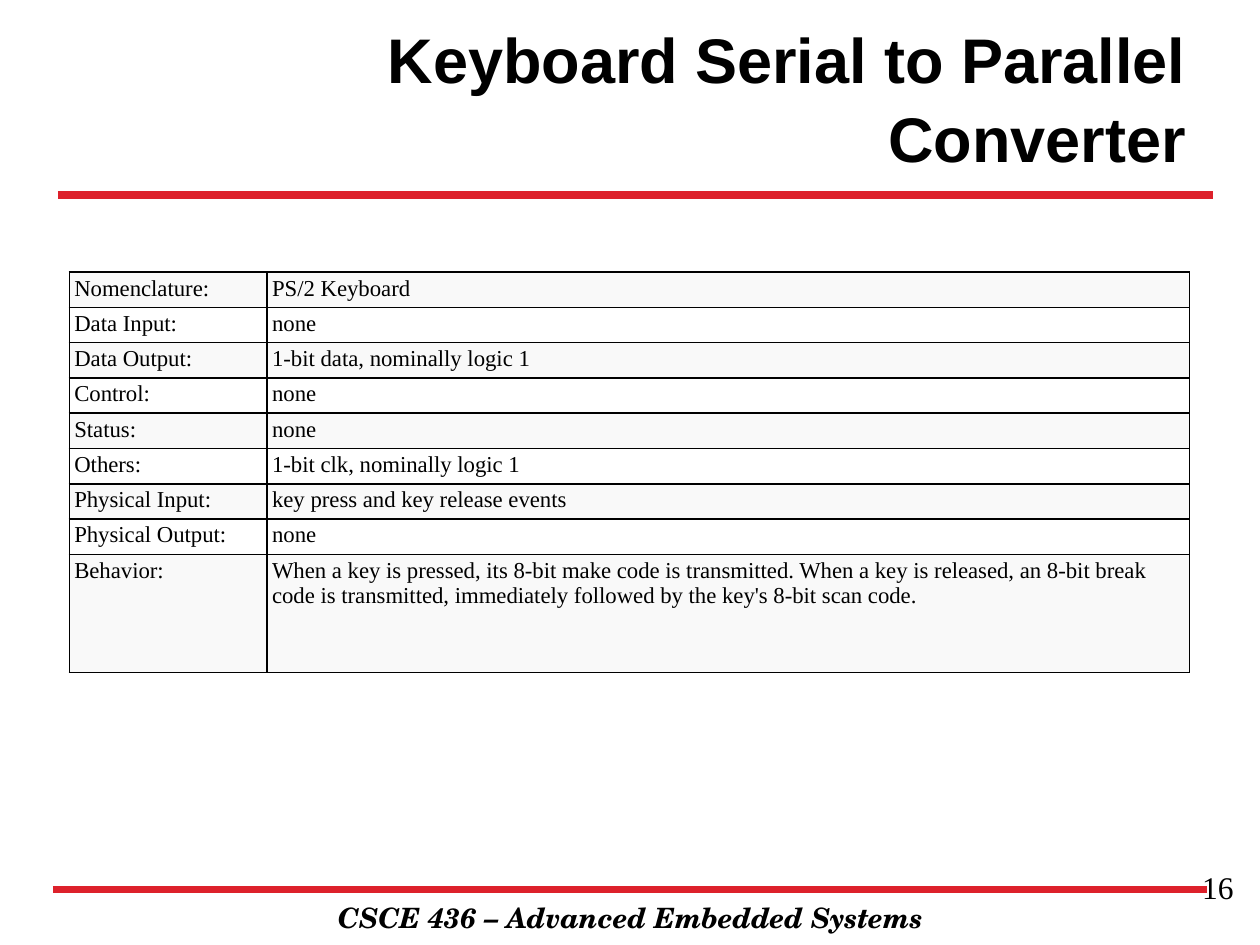
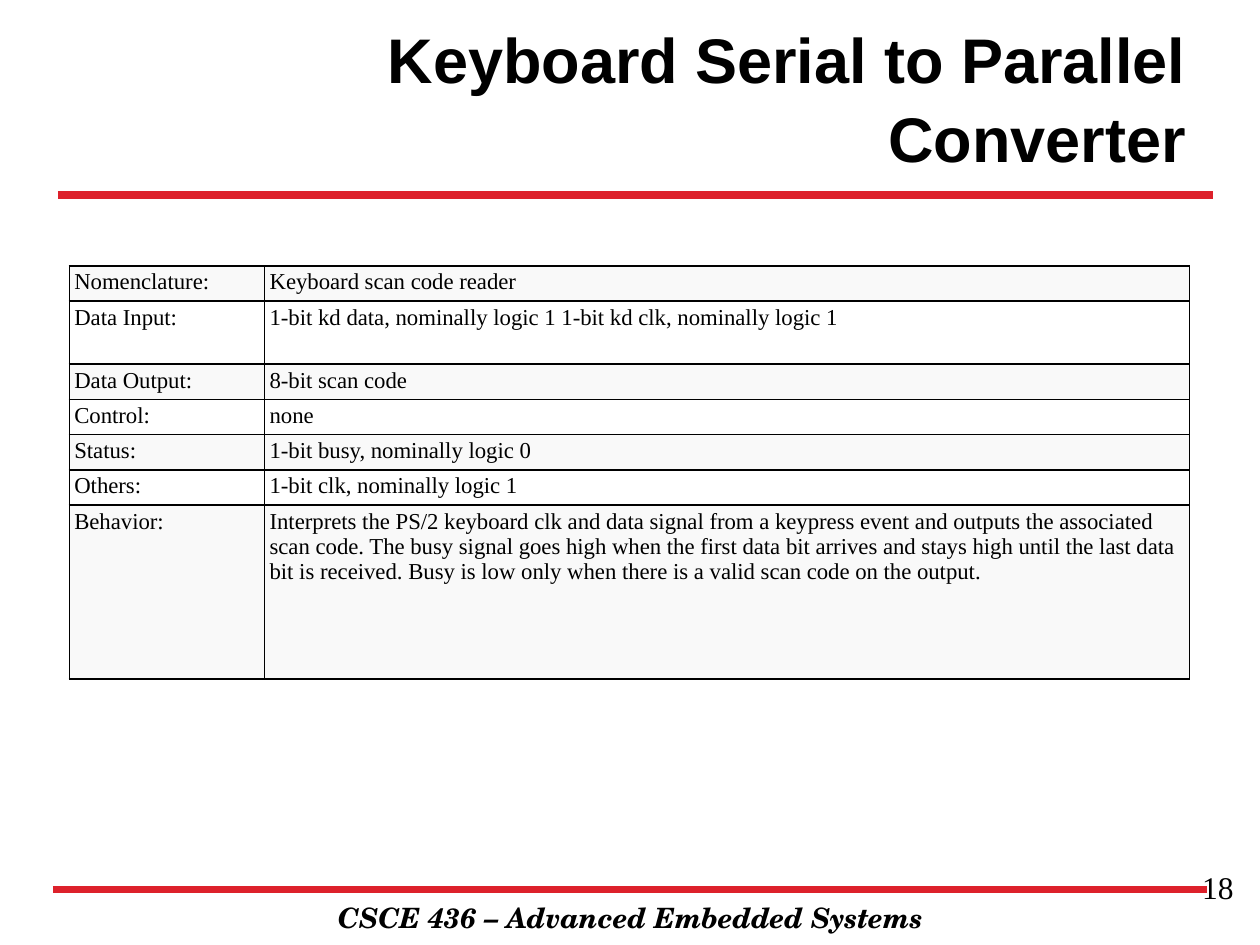
"""Build two component description slides for an embedded systems lecture."""
import pptx
import pptx.dml.color
import pptx.enum.shapes
import pptx.enum.text
import pptx.oxml
import pptx.oxml.ns
import pptx.util

ALIGN = pptx.enum.text.PP_ALIGN
RED, BLACK, WHITE, PALE = "DD212B", "000000", "FFFFFF", "F9F9F9"
TITLE_FONT, BODY_FONT, FOOTER_FONT = "Arial", "Times New Roman", "TeX Gyre Schola"
COURSE = "CSCE 436 – Advanced Embedded Systems"
TITLE = "Keyboard Serial to Parallel Converter"
ROW = 2.8

KEYBOARD = [
    ("Nomenclature:", "PS/2 Keyboard", ROW),
    ("Data Input:", "none", ROW),
    ("Data Output:", "1-bit data, nominally logic 1", ROW),
    ("Control:", "none", ROW),
    ("Status:", "none", ROW),
    ("Others:", "1-bit clk, nominally logic 1", ROW),
    ("Physical Input:", "key press and key release events", ROW),
    ("Physical Output:", "none", ROW),
    ("Behavior:", "When a key is pressed, its 8-bit make code is transmitted. "
     "When a key is released, an 8-bit break code is transmitted, immediately "
     "followed by the key's 8-bit scan code.", 9.4),
]
READER = [
    ("Nomenclature:", "Keyboard scan code reader", ROW),
    ("Data Input:", "1-bit kd data, nominally logic 1 1-bit kd clk, nominally logic 1", 5),
    ("Data Output:", "8-bit scan code", ROW),
    ("Control:", "none", ROW),
    ("Status:", "1-bit busy, nominally logic 0", ROW),
    ("Others:", "1-bit clk, nominally logic 1", ROW),
    ("Behavior:", "Interprets the PS/2 keyboard clk and data signal from a keypress "
     "event and outputs the associated scan code. The busy signal goes high when the "
     "first data bit arrives and stays high until the last data bit is received. Busy "
     "is low only when there is a valid scan code on the output.", 13.8),
]


def color(code):
    return pptx.dml.color.RGBColor.from_string(code)


def write(frame, text, font=BODY_FONT, size=13, bold=False, italic=False,
          align=ALIGN.LEFT, spacing=1.0):
    frame.word_wrap = True
    para = frame.paragraphs[0]
    para.alignment, para.line_spacing = align, spacing
    span = para.add_run()
    span.text = text
    span.font.name, span.font.size = font, pptx.util.Pt(size)
    span.font.bold, span.font.italic = bold, italic
    span.font.color.rgb = color(BLACK)


class Lecture:
    def __init__(self, columns=100, rows=75):
        self.deck = pptx.Presentation()
        self.deck.slide_width = pptx.util.Inches(10)
        self.deck.slide_height = pptx.util.Inches(7.5)
        self.column = self.deck.slide_width / columns
        self.row = self.deck.slide_height / rows
        self.page = None

    def across(self, count):
        return round(count * self.column)

    def down(self, count):
        return round(count * self.row)

    def place(self, left, top, width, height):
        return self.across(left), self.down(top), self.across(width), self.down(height)

    def text(self, place, text, **style):
        box = self.page.shapes.add_textbox(*self.place(*place))
        write(box.text_frame, text, **style)

    def rule(self, left, right, height):
        line = self.page.shapes.add_connector(
            pptx.enum.shapes.MSO_CONNECTOR.STRAIGHT,
            self.across(left), self.down(height), self.across(right), self.down(height))
        line.line.color.rgb = color(RED)
        line.line.width = pptx.util.Pt(4.5)
        line._element.spPr.append(pptx.oxml.parse_xml(
            f'<a:effectLst {pptx.oxml.ns.nsdecls("a")}/>'))

    def border(self, cell):
        properties = cell._tc.get_or_add_tcPr()
        for index, side in enumerate(("lnL", "lnR", "lnT", "lnB")):
            properties.insert(index, pptx.oxml.parse_xml(
                f'<a:{side} {pptx.oxml.ns.nsdecls("a")} w="{pptx.util.Pt(1)}">'
                f'<a:solidFill><a:srgbClr val="{BLACK}"/></a:solidFill></a:{side}>'))

    def table(self, top, label_width, entries, left=5.5, width=88.9):
        height = sum(entry[2] for entry in entries)
        table = self.page.shapes.add_table(
            len(entries), 2, *self.place(left, top, width, height)).table
        table.first_row = table.horz_banding = False
        table.columns[0].width = self.across(label_width)
        table.columns[1].width = self.across(width - label_width)
        for index, (label, value, tall) in enumerate(entries):
            table.rows[index].height = self.down(tall)
            for cell, text in zip(table.rows[index].cells, (label, value)):
                cell.margin_left = cell.margin_right = self.across(0.4)
                cell.margin_top = cell.margin_bottom = self.down(0.3)
                cell.fill.solid()
                cell.fill.fore_color.rgb = color(WHITE if index % 2 else PALE)
                self.border(cell)
                write(cell.text_frame, text)

    def slide(self, title, number, top, label_width, entries):
        self.page = self.deck.slides.add_slide(self.deck.slide_layouts[6])
        self.rule(4.2, 95.8, 70.6)
        self.rule(4.6, 96.3, 15.5)
        self.text((14.2, 71, 71.7, 3.7), COURSE, font=FOOTER_FONT, size=16,
                  bold=True, italic=True, align=ALIGN.CENTER)
        self.text((20.9, 0.8, 74.2, 12.5), title, font=TITLE_FONT, size=36,
                  bold=True, align=ALIGN.RIGHT, spacing=1.05)
        self.table(top, label_width, entries)
        self.text((75.6, 68.4, 23.3, 5.2), str(number), size=18, align=ALIGN.RIGHT)


def main():
    lecture = Lecture()
    lecture.slide(TITLE, 16, 21.6, 15.7, KEYBOARD)
    lecture.slide(TITLE, 18, 21.1, 15.5, READER)
    lecture.deck.save("out.pptx")


if __name__ == "__main__":
    main()
